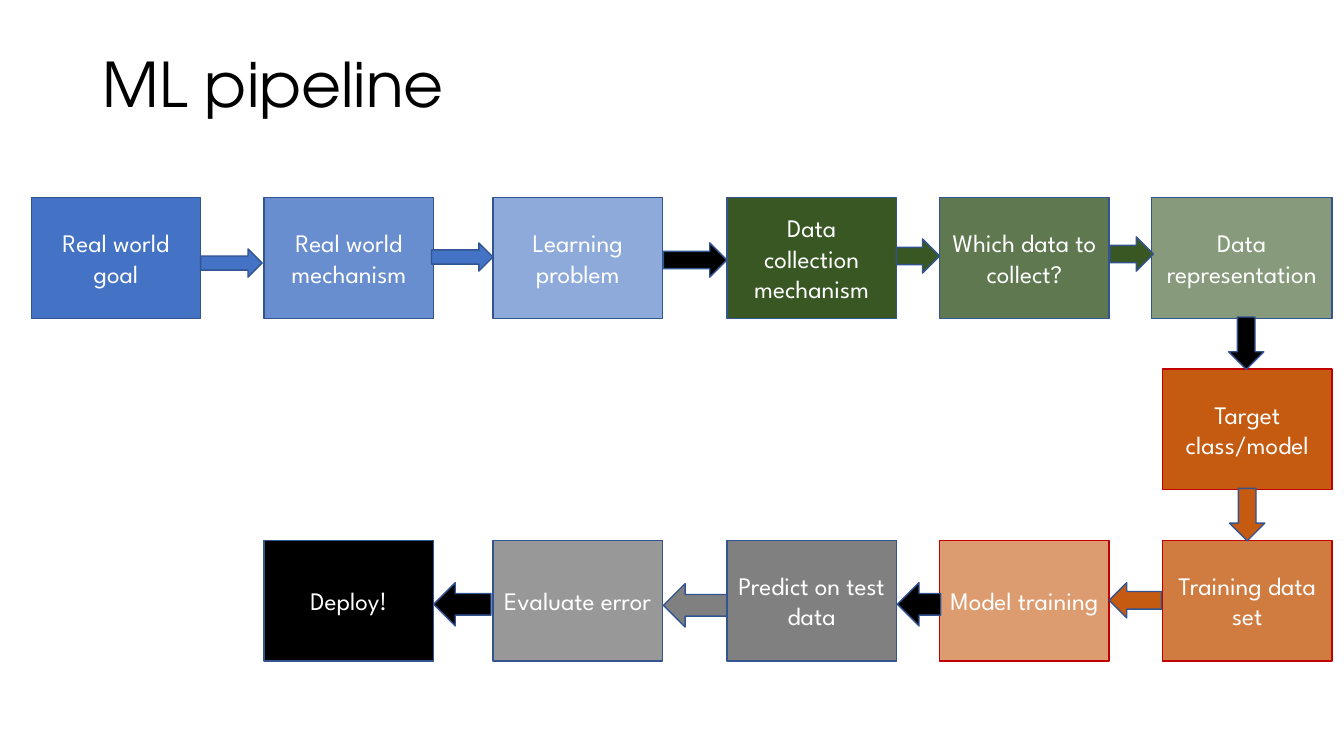
from pptx import Presentation
from pptx import util as u
from pptx.dml.color import RGBColor
from pptx.enum import shapes, text
from pptx.oxml.ns import qn
from lxml import etree

BLUE, GREEN, RUST = "4472C4", "385723", "C55A11"
GREY, BLACK, NAVY, RED = "808080", "000000", "325491", "C00000"
COLS = [0.31, 2.62, 4.89, 7.21, 9.32, 11.53]
TOP, MID, LOW = 1.96, 3.66, 5.36


def style(font, **vals):
    color = vals.pop("color")
    for key, val in vals.items():
        setattr(font, key, val)
    font.color.rgb = RGBColor.from_string(color)


def draw(kind, box, fill, line, alpha=100):
    shape = slide.shapes.add_shape(kind, *[u.Inches(n) for n in box])
    shape.shadow.inherit = False
    shape.fill.solid()
    shape.fill.fore_color.rgb = RGBColor.from_string(fill)
    if alpha < 100:
        clr = shape.fill._xPr.find(qn("a:solidFill"))[0]
        etree.SubElement(clr, qn("a:alpha")).set("val", str(alpha * 1000))
    shape.line.color.rgb = RGBColor.from_string(line)
    shape.line.width = u.Pt(1)
    return shape


deck = Presentation()
deck.slide_width = u.Inches(13.33)
deck.slide_height = u.Inches(7.5)
slide = deck.slides.add_slide(deck.slide_layouts[5])

title = slide.shapes.title
place = {"left": 0.92, "top": 0.4, "width": 11.5, "height": 0.94}
for key, val in place.items():
    setattr(title, key, u.Inches(val))
frame = title.text_frame
frame.text = "ML pipeline"
frame.auto_size = text.MSO_AUTO_SIZE.NONE
frame.vertical_anchor = text.MSO_ANCHOR.MIDDLE
para = frame.paragraphs[0]
para.alignment = text.PP_ALIGN.LEFT
para.line_spacing = 0.9
style(para.runs[0].font, name="TeX Gyre Adventor", size=u.Pt(44), color=BLACK)

steps = [
    ("Real world goal", COLS[0], TOP, BLUE, 100, NAVY),
    ("Real world mechanism", COLS[1], TOP, BLUE, 80, NAVY),
    ("Learning problem", COLS[2], TOP, BLUE, 60, NAVY),
    ("Data collection mechanism", COLS[3], TOP, GREEN, 100, NAVY),
    ("Which data to collect?", COLS[4], TOP, GREEN, 80, NAVY),
    ("Data representation", 11.42, TOP, GREEN, 60, NAVY),
    ("Target class/model", COLS[5], MID, RUST, 100, RED),
    ("Training data set", COLS[5], LOW, RUST, 80, RED),
    ("Model training", COLS[4], LOW, RUST, 60, RED),
    ("Predict on test data", COLS[3], LOW, GREY, 100, NAVY),
    ("Evaluate error", COLS[2], LOW, "7F7F7F", 80, NAVY),
    ("Deploy!", COLS[1], LOW, BLACK, 100, NAVY),
]
for label, x, y, fill, alpha, line in steps:
    wide = 1.79 if label == "Data representation" else 1.68
    step = draw(shapes.MSO_SHAPE.RECTANGLE, (x, y, wide, 1.2), fill, line, alpha)
    frame = step.text_frame
    frame.word_wrap = True
    frame.vertical_anchor = text.MSO_ANCHOR.MIDDLE
    frame.text = label
    para = frame.paragraphs[0]
    para.alignment = text.PP_ALIGN.CENTER
    style(para.runs[0].font, name="League Spartan", size=u.Pt(18), color="FFFFFF")

arrows = [
    (1.99, 2.47, 0.61, 0.28, 0, BLUE),
    (4.28, 2.41, 0.61, 0.28, 0, BLUE),
    (6.58, 2.41, 0.63, 0.34, 0, BLACK),
    (8.89, 2.37, 0.43, 0.34, 0, GREEN),
    (11.01, 2.35, 0.43, 0.34, 0, GREEN),
    (12.1, 3.23, 0.52, 0.35, 90, BLACK),
    (12.11, 4.93, 0.52, 0.35, 90, RUST),
    (11, 5.78, 0.52, 0.35, 180, RUST),
    (8.9, 5.78, 0.43, 0.43, 180, BLACK),
    (6.58, 5.79, 0.63, 0.43, 180, GREY),
    (4.3, 5.78, 0.57, 0.43, 180, BLACK),
]
for *box, turn, fill in arrows:
    arrow = draw(shapes.MSO_SHAPE.RIGHT_ARROW, box, fill, NAVY)
    arrow.rotation = turn

deck.save("out.pptx")
